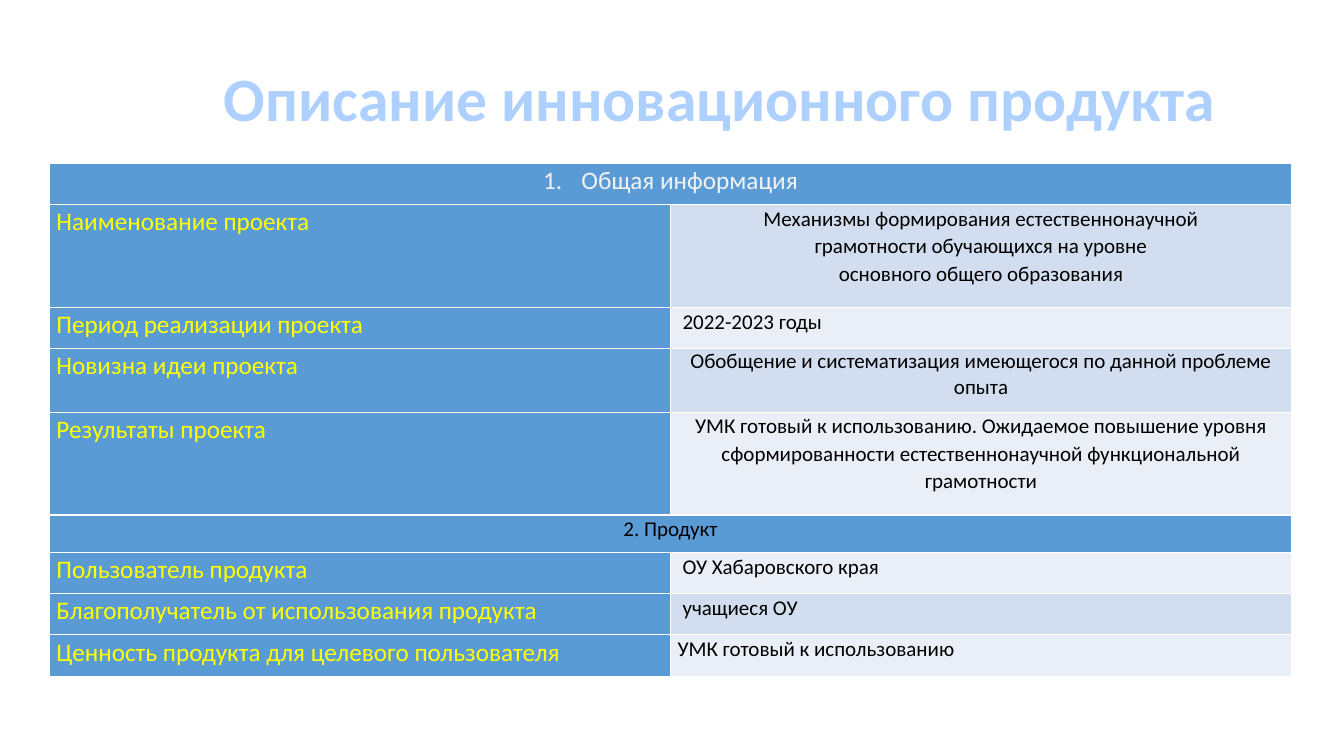
from dataclasses import dataclass

from lxml.etree import SubElement
from pptx import Presentation
from pptx.dml.color import RGBColor
from pptx.enum.text import MSO_ANCHOR, MSO_AUTO_SIZE, PP_ALIGN
from pptx.oxml.ns import qn
from pptx.slide import Slide
from pptx.table import Table, _Cell
from pptx.text.text import _Paragraph
from pptx.util import Inches, Pt

WIDTH, HEIGHT = Inches(13.33), Inches(7.5)
FONT = "Calibri"
BLUE, WHITE, BLACK, YELLOW = "5B9BD5", "FFFFFF", "000000", "FFFF00"
BANDS = ("EAEFF7", "D2DEEF")


@dataclass
class Style:
    size: float
    color: str
    align: PP_ALIGN = PP_ALIGN.LEFT
    space: float = 1.07
    indent: float = 0
    bold: bool = False


@dataclass
class Row:
    """A label with its value, or a band over both columns if value is None."""
    height: float
    label: str
    style: Style
    value: str | None = None
    answer: Style | None = None


CENTER = PP_ALIGN.CENTER
TITLE = Style(44, "ADD0FF", CENTER, 1, bold=True)
HEAD = Style(18, "F2F2F2", CENTER)
BAND = Style(15, BLACK, CENTER)
LABEL = Style(18, YELLOW)
PLAIN = Style(15, BLACK)
SHIFT = Style(15, BLACK, indent=0.05)
TIGHT = Style(15, BLACK, CENTER, 1)

ROWS = [
    Row(0.41, "Общая информация", HEAD),
    Row(1.02, "Наименование проекта", LABEL,
        "Механизмы формирования естественнонаучной\n"
        "грамотности обучающихся на уровне\nосновного общего образования", BAND),
    Row(0.41, "Период реализации проекта", LABEL, "2022-2023 годы", SHIFT),
    Row(0.63, "Новизна идеи проекта", LABEL,
        "Обобщение и систематизация имеющегося по данной проблеме опыта", TIGHT),
    Row(1.02, "Результаты проекта", LABEL,
        "УМК готовый к использованию. Ожидаемое повышение уровня "
        "сформированности естественнонаучной функциональной грамотности", BAND),
    Row(0.37, "2. Продукт", BAND),
    Row(0.41, "Пользователь продукта", LABEL, "ОУ Хабаровского края", SHIFT),
    Row(0.41, "Благополучатель от использования продукта", LABEL, "учащиеся ОУ", SHIFT),
    Row(0.41, "Ценность продукта для целевого пользователя", LABEL,
        "УМК готовый к использованию", PLAIN),
]


def paint(target, color: str) -> None:
    """Give a fill a solid colour."""
    target.solid()
    target.fore_color.rgb = RGBColor.from_string(color)


def write(para: _Paragraph, text: str, style: Style) -> None:
    para.alignment = style.align
    para.line_spacing = style.space
    if style.indent:
        para._p.get_or_add_pPr().set("marL", str(Inches(style.indent)))
    for num, line in enumerate(text.split("\n")):
        if num:
            para.add_line_break()
        run = para.add_run()
        run.text = line
        run.font.name = FONT
        run.font.size = Pt(style.size)
        run.font.bold = style.bold
        paint(run.font.fill, style.color)


def number(para: _Paragraph) -> None:
    """Turn a paragraph into the first item of a numbered list."""
    props = para._p.get_or_add_pPr()
    hang = Inches(0.38)
    props.set("marL", str(hang))
    props.set("indent", str(-hang))
    SubElement(props, qn("a:buAutoNum"), type="arabicPeriod")


def frame(cell: _Cell, fill: str) -> None:
    """Set a cell's margins, white borders and fill."""
    cell.margin_left = cell.margin_right = Inches(0.07)
    cell.margin_top = cell.margin_bottom = 0
    cell.vertical_anchor = MSO_ANCHOR.TOP
    props = cell._tc.get_or_add_tcPr()
    for side in "LRTB":
        line = SubElement(props, qn(f"a:ln{side}"), w=str(Pt(1)))
        solid = SubElement(line, qn("a:solidFill"))
        SubElement(solid, qn("a:srgbClr"), val=WHITE)
    paint(cell.fill, fill)


def fill_row(table: Table, index: int, row: Row) -> None:
    table.rows[index].height = Inches(row.height)
    left, right = table.cell(index, 0), table.cell(index, 1)
    frame(left, BLUE)
    frame(right, BLUE if row.value is None else BANDS[index % 2])
    write(left.text_frame.paragraphs[0], row.label, row.style)
    if row.value is None:
        left.merge(right)
    else:
        write(right.text_frame.paragraphs[0], row.value, row.answer)


def add_title(slide: Slide) -> None:
    box = slide.shapes.add_textbox(
        int(WIDTH * 0.156), int(HEIGHT * 0.073), int(WIDTH * 0.76), int(HEIGHT * 0.112))
    box.text_frame.word_wrap = False
    box.text_frame.auto_size = MSO_AUTO_SIZE.SHAPE_TO_FIT_TEXT
    write(box.text_frame.paragraphs[0], "Описание инновационного продукта", TITLE)


def add_grid(slide: Slide) -> None:
    tall = Inches(sum(row.height for row in ROWS))
    table = slide.shapes.add_table(
        len(ROWS), 2, Inches(0.49), Inches(1.62), Inches(12.32), tall).table
    table.first_row = table.horz_banding = False
    for index, row in enumerate(ROWS):
        fill_row(table, index, row)
    number(table.cell(0, 0).text_frame.paragraphs[0])


def main() -> None:
    deck = Presentation()
    deck.slide_width, deck.slide_height = WIDTH, HEIGHT
    slide = deck.slides.add_slide(deck.slide_layouts[6])
    add_grid(slide)
    add_title(slide)
    deck.save("out.pptx")


if __name__ == "__main__":
    main()
